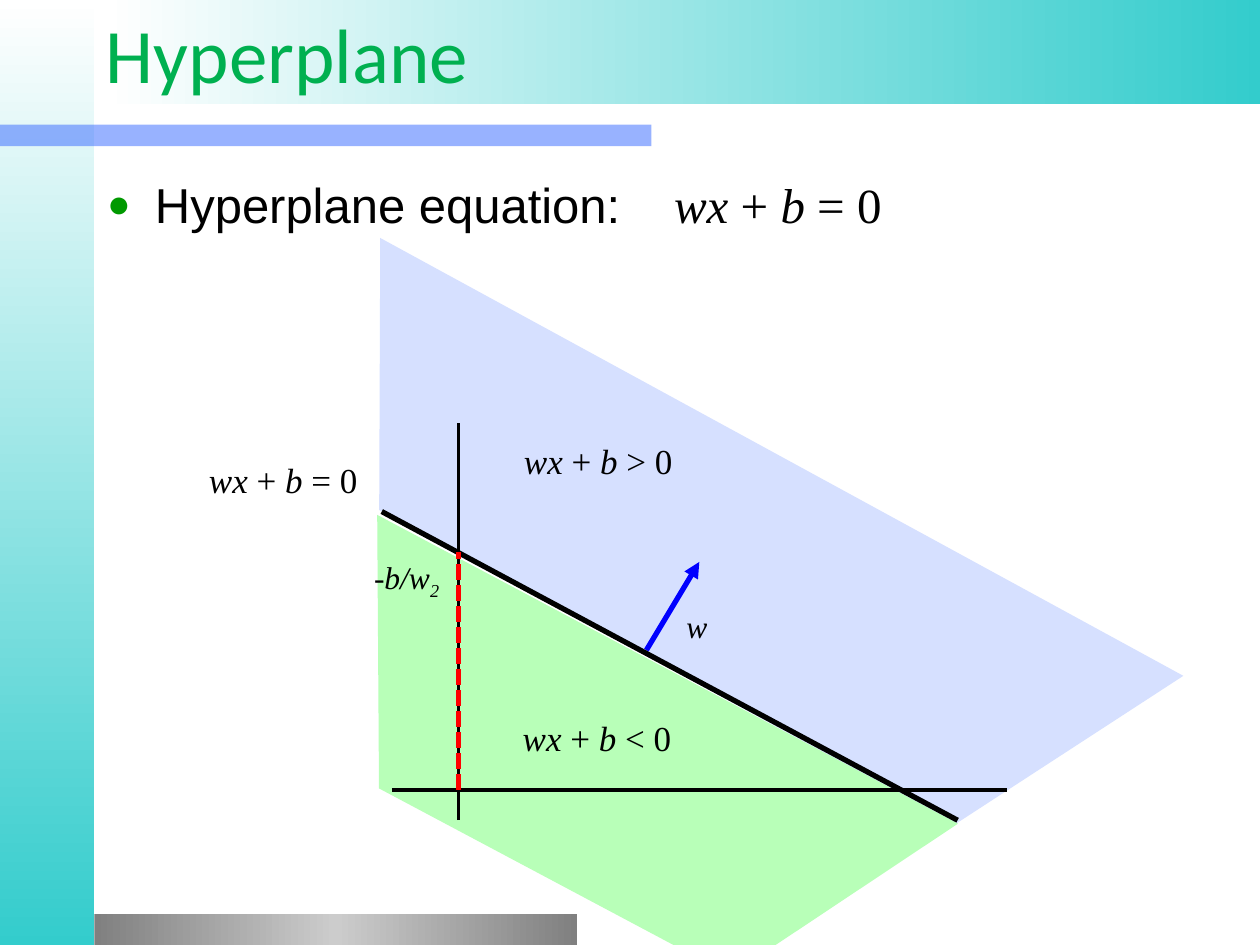
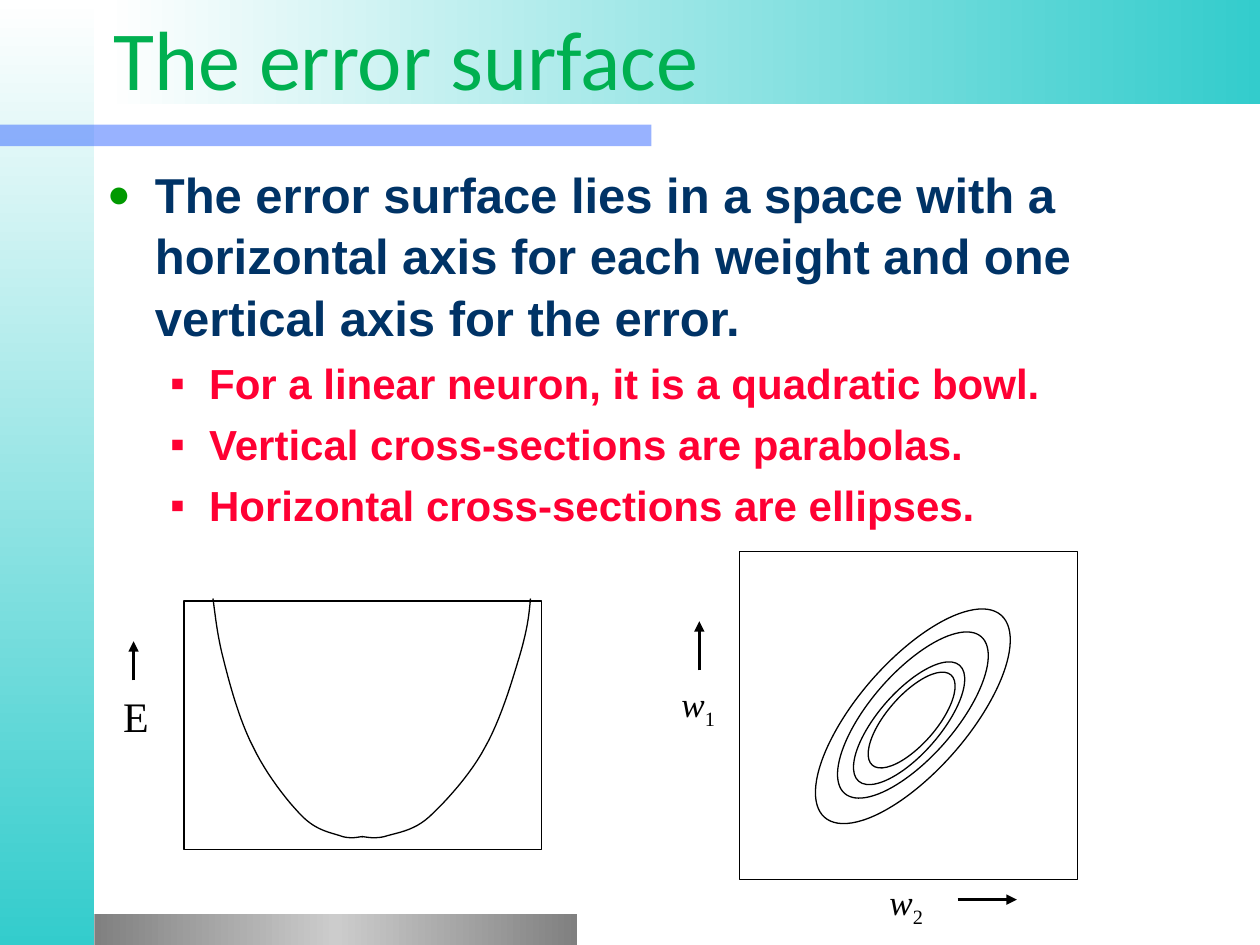
import itertools
from dataclasses import dataclass

import pptx
import pptx.dml.color
import pptx.enum.dml
import pptx.enum.shapes
import pptx.enum.text
import pptx.oxml.ns
import pptx.util
from lxml import etree

Inches, Pt = pptx.util.Inches, pptx.util.Pt
SHAPE = pptx.enum.shapes.MSO_SHAPE
ANCHOR = pptx.enum.text.MSO_ANCHOR
AUTO_SIZE = pptx.enum.text.MSO_AUTO_SIZE
qn = pptx.oxml.ns.qn

SANS, SERIF, TITLE_FONT = "Arial", "Times New Roman", "Calibri"
BLACK, WHITE, TEAL, GREEN = "000000", "FFFFFF", "33CCCC", "00B050"
NAVY, RED, BULLET_GREEN = "003366", "FF0033", "009900"

Box = tuple[float, float, float, float]


@dataclass
class Band:
    box: Box
    stops: tuple[str, ...]
    angle: int = 0
    alpha: int = 100


@dataclass
class Line:
    start: tuple[float, float]
    end: tuple[float, float]
    width: float = 0
    color: str = BLACK
    dashed: bool = False
    arrow: bool = False


@dataclass
class Level:
    char: str
    margin: float
    hanging: float
    before: float
    bullet_color: str = ""
    bullet_size: int = 100


BANDS = (
    Band((0, 0, 0.75, 7.5), (WHITE, TEAL), angle=90),
    Band((0.75, 7.25, 3.83, 0.25), ("808080", "CCCCCC", "808080")),
    Band((0.84, 0, 9.16, 0.83), (WHITE, TEAL)),
    Band((0, 0.99, 5.17, 0.17), ("3366FF",), alpha=50),
)

LEVELS = (
    Level("●", 0.38, 0.38, 2, BULLET_GREEN, 80),
    Level("▪", 0.81, 0.31, 4.8),
)


def rgb(color: str):
    return pptx.dml.color.RGBColor.from_string(color)


def inches(box):
    return [Inches(v) for v in box]


def sub(parent, tag: str, **attrs):
    return etree.SubElement(parent, qn(tag), {k: str(v) for k, v in attrs.items()})


def add_run(p, text: str, *, size: float, font: str = SERIF, color: str = BLACK,
            bold: bool = False, italic: bool = False, subscript: bool = False):
    r = p.add_run()
    r.text = text
    f = r.font
    f.size, f.name, f.bold, f.italic = Pt(size), font, bold, italic
    f.color.rgb = rgb(color)
    if subscript:
        r._r.get_or_add_rPr().set("baseline", "-25000")


def add_equation(p, relation: str, size: float):
    """Write wx + b against 0, with the variables in italics."""
    for text, italic in (("wx", True), (" + ", False), ("b", True), (f" {relation} 0", False)):
        add_run(p, text, size=size, italic=italic)


def add_label(s, box: Box, wrap: bool = True):
    """Add a text box and return its paragraph."""
    tf = s.shapes.add_textbox(*inches(box)).text_frame
    tf.word_wrap = wrap
    tf.auto_size = AUTO_SIZE.SHAPE_TO_FIT_TEXT
    return tf.paragraphs[0]


def add_variable(s, box: Box, name: str, index: str = "", *, size: float = 20,
                 italic_index: bool = False, wrap: bool = False):
    p = add_label(s, box, wrap)
    add_run(p, name, size=size, italic=True)
    if index:
        add_run(p, index, size=size, italic=italic_index, subscript=True)


def style_shape(sp, fill: str = "", outline: str = ""):
    sp.shadow.inherit = False
    if fill:
        sp.fill.solid()
        sp.fill.fore_color.rgb = rgb(fill)
    else:
        sp.fill.background()
    if outline:
        sp.line.color.rgb = rgb(outline)
        sp.line.width = Pt(0.75)
    else:
        sp.line.fill.background()


def add_shape(s, kind, box: Box, *, fill: str = "", outline: str = "", rotation: float = 0):
    sp = s.shapes.add_shape(kind, *inches(box))
    sp.rotation = rotation
    style_shape(sp, fill, outline)
    return sp


def add_line(s, line: Line):
    c = s.shapes.add_connector(pptx.enum.shapes.MSO_CONNECTOR.STRAIGHT,
                               *inches(line.start + line.end))
    c.line.color.rgb = rgb(line.color)
    c.line.width = Pt(line.width)
    if line.dashed:
        c.line.dash_style = pptx.enum.dml.MSO_LINE.SQUARE_DOT
    if line.arrow:
        sub(c.line._get_or_add_ln(), "a:tailEnd", type="triangle")
    sub(c._element.spPr, "a:effectLst")


def add_curve(s, points, steps: int = 12):
    """Draw joined cubic curves; each takes three further points."""
    path = []
    for i in range(0, len(points) - 1, 3):
        for k in range(1, steps + 1):
            t = k / steps
            weights = ((1 - t) ** 3, 3 * t * (1 - t) ** 2, 3 * t * t * (1 - t), t ** 3)
            path.append(tuple(Inches(sum(w * pt[axis] for w, pt in zip(weights, points[i:i + 4])))
                              for axis in (0, 1)))
    builder = s.shapes.build_freeform(*inches(points[0]))
    builder.add_line_segments(path, close=False)
    style_shape(builder.convert_to_shape(), outline=BLACK)


def add_bands(s):
    """Draw the bands and move them to the layout, behind its placeholders."""
    tree = s.slide_layout.shapes.element
    for i, band in enumerate(BANDS):
        sp = add_shape(s, SHAPE.RECTANGLE, band.box, fill=band.stops[0])
        el = sp._element
        if len(band.stops) > 1:
            sp.fill.gradient()
            sp.fill.gradient_angle = (360 - band.angle) % 360
            stops = el.spPr.find(".//" + qn("a:gsLst"))
            for gs in list(stops):
                stops.remove(gs)
            for k, color in enumerate(band.stops):
                gs = sub(stops, "a:gs", pos=100000 * k // (len(band.stops) - 1))
                sub(gs, "a:srgbClr", val=color)
        else:
            sub(el.spPr.find(".//" + qn("a:srgbClr")), "a:alpha", val=band.alpha * 1000)
        el.nvSpPr.cNvPr.set("id", str(100 + i))
        tree.insert(2 + i, el)


def place(sp, box: Box, anchor):
    sp.left, sp.top, sp.width, sp.height = inches(box)
    tf = sp.text_frame
    tf.word_wrap = True
    tf.auto_size = AUTO_SIZE.NONE
    tf.vertical_anchor = anchor
    return tf


def set_title(s, text: str, box: Box, size: float):
    p = place(s.shapes.title, box, ANCHOR.MIDDLE).paragraphs[0]
    p.alignment = pptx.enum.text.PP_ALIGN.LEFT
    add_run(p, text, size=size, font=TITLE_FONT, color=GREEN)


def format_bullet(p, depth: int):
    level = LEVELS[depth]
    p.level = depth
    p.line_spacing = 1.05
    p.space_before = Pt(level.before)
    pPr = p._p.get_or_add_pPr()
    pPr.set("marL", str(Inches(level.margin)))
    pPr.set("indent", str(-Inches(level.hanging)))
    if level.bullet_color:
        sub(sub(pPr, "a:buClr"), "a:srgbClr", val=level.bullet_color)
    sub(pPr, "a:buSzPct", val=level.bullet_size * 1000)
    sub(pPr, "a:buFont", typeface=SANS)
    sub(pPr, "a:buChar", char=level.char)


def build_hyperplane(s):
    set_title(s, "Hyperplane", (0.74, 0, 9.26, 0.84), 44)
    p = place(s.placeholders[1], (0.75, 1.31, 8.5, 1.18), ANCHOR.TOP).paragraphs[0]
    format_bullet(p, 0)
    add_run(p, "Hyperplane equation:\t", size=28, font=SANS)
    add_equation(p, "=", 28)

    for box, rotation, color in (((2.24, 5.2, 5.22, 1.91), 208, "B8FFB8"),
                                 ((2.12, 3.51, 7.26, 1.9), 208.6, "D6E0FF")):
        half_plane = add_shape(s, SHAPE.TRAPEZOID, box, fill=color, rotation=rotation)
        half_plane.adjustments[0] = 0.54
        s.shapes.element.insert(2, half_plane._element)
    # The blue half-plane covers the edge of the green one.
    s.shapes.element.insert(3, half_plane._element)

    for line in (
        Line((3.11, 6.27), (7.99, 6.27)),
        Line((3.64, 6.51), (3.64, 3.36)),
        Line((5.13, 5.16), (5.55, 4.46), 3, "0000FF", arrow=True),
        Line((3.03, 4.06), (7.6, 6.51), 3),
        Line((3.64, 6.27), (3.64, 4.38), 3, "FF0000", dashed=True),
    ):
        add_line(s, line)

    add_variable(s, (5.35, 4.77, 0.24, 0.4), "w", size=18, wrap=True)
    add_variable(s, (2.87, 4.38, 0.79, 0.4), "-b/w", "2", size=18, italic_index=True, wrap=True)
    for relation, left, top in ((">", 4.06, 3.44), ("<", 4.05, 5.64), ("=", 1.56, 3.59)):
        add_equation(add_label(s, (left, top, 1.7, 0.44)), relation, 20)


def build_error_surface(s):
    set_title(s, "The error surface", (0.8, -0.02, 9, 0.94), 48)
    tf = place(s.placeholders[1], (0.75, 1.23, 9, 2.91), ANCHOR.TOP)
    items = (
        (0, "The error surface lies in a space with a horizontal axis for each weight "
            "and one vertical axis for the error."),
        (1, "For a linear neuron, it is a quadratic bowl."),
        (1, "Vertical cross-sections are parabolas."),
        (1, "Horizontal cross-sections are ellipses."),
    )
    paragraphs = itertools.chain(tf.paragraphs, iter(tf.add_paragraph, None))
    for (depth, text), p in zip(items, paragraphs):
        format_bullet(p, depth)
        add_run(p, text, size=(28, 24)[depth], font=SANS, color=(NAVY, RED)[depth], bold=True)

    add_shape(s, SHAPE.RECTANGLE, (1.46, 4.77, 2.84, 1.97), outline=BLACK)
    heights = (4.75, 4.89, 5.02, 5.22, 5.42, 5.72, 5.93, 6.14, 6.36, 6.48, 6.6, 6.61, 6.64,
               6.66, 6.64, 6.64)
    left_arm = (1.69, 1.71, 1.72, 1.77, 1.82, 1.9, 2.01, 2.11, 2.28, 2.4, 2.52, 2.64, 2.72,
                2.8, 2.85, 2.88)
    right_arm = (4.21, 4.2, 4.18, 4.12, 4.06, 3.97, 3.85, 3.74, 3.54, 3.41, 3.28, 3.14, 3.05,
                 2.96, 2.9, 2.87)
    for arm in (left_arm, right_arm):
        add_curve(s, list(zip(arm, heights)))

    add_shape(s, SHAPE.RECTANGLE, (5.87, 4.38, 2.68, 2.6), outline=BLACK)
    for box in ((6.81, 4.62, 0.87, 2.13), (6.91, 4.85, 0.67, 1.65),
                (6.97, 5.13, 0.49, 1.22), (7.04, 5.24, 0.39, 0.95)):
        add_shape(s, SHAPE.OVAL, box, outline=BLACK, rotation=41.1)

    add_run(add_label(s, (0.88, 5.43, 0.4, 0.5), wrap=False), "E", size=24)
    add_variable(s, (5.31, 5.37, 0.48, 0.44), "w", "1")
    add_variable(s, (6.96, 6.94, 0.48, 0.44), "w", "2")
    for start, end in (((1.06, 5.4), (1.06, 5.09)), ((5.55, 5.32), (5.55, 4.93)),
                       ((7.6, 7.14), (8.07, 7.14))):
        add_line(s, Line(start, end, 1.5, arrow=True))


def main():
    prs = pptx.Presentation()
    prs.slide_width, prs.slide_height = Inches(10), Inches(7.5)
    layout = prs.slide_layouts[1]
    hyperplane, error_surface = (prs.slides.add_slide(layout) for _ in range(2))
    add_bands(hyperplane)
    build_hyperplane(hyperplane)
    build_error_surface(error_surface)
    prs.save("out.pptx")


if __name__ == "__main__":
    main()
